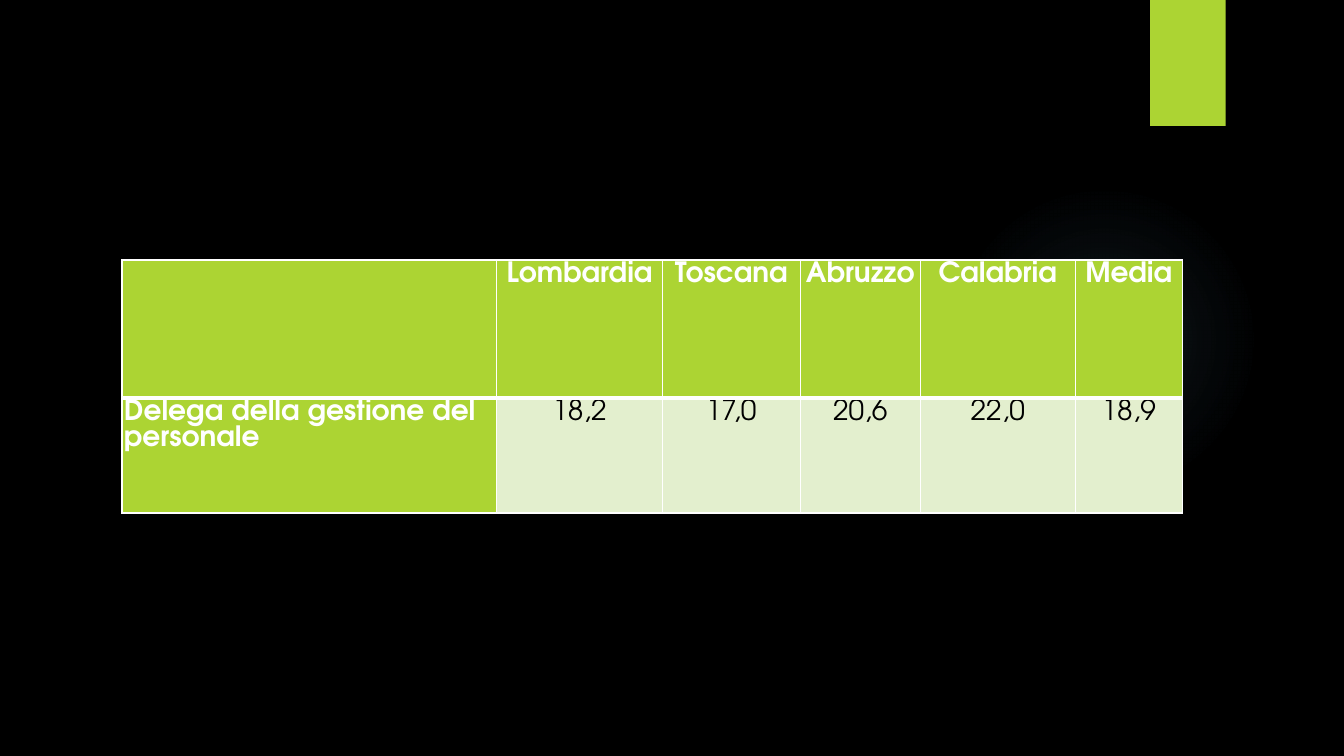
from dataclasses import dataclass

import pptx
import pptx.dml.color
import pptx.enum.shapes
import pptx.enum.text
import pptx.oxml
import pptx.oxml.ns
import pptx.util
from pptx.util import Pt

SHAPE = pptx.enum.shapes.MSO_SHAPE
ALIGN = pptx.enum.text.PP_ALIGN


@dataclass(frozen=True)
class Theme:
    font: str = "TeX Gyre Adventor"
    size: float = 20
    background: str = "000000"
    accent: str = "ACD433"
    pale: str = "E3EFCE"
    light: str = "FFFFFF"
    dark: str = "000000"
    glow: str = "7AC4F0"
    thin: float = 1
    thick: float = 3
    inset: float = 1.44


@dataclass(frozen=True)
class Column:
    width: float
    heading: str
    value: str


THEME = Theme()
COLUMNS = (
    Column(267.84, "", "Delega della gestione del personale"),
    Column(118.08, "Lombardia", "18,2"),
    Column(98.64, "Toscana", "17,0"),
    Column(85.68, "Abruzzo", "20,6"),
    Column(110.88, "Calabria", "22,0"),
    Column(76.32, "Media", "18,9"),
)
ROW_HEIGHTS = (98.64, 82.08)
GLOW_STOPS = ((0, 7), (36, 6), (69, 0))  # position and opacity, in percent


def rgb(value: str) -> pptx.dml.color.RGBColor:
    return pptx.dml.color.RGBColor.from_string(value)


def add_plain_shape(page, kind, left: float, top: float, width: float, height: float):
    shape = page.shapes.add_shape(kind, Pt(left), Pt(top), Pt(width), Pt(height))
    shape.shadow.inherit = False
    shape.line.fill.background()
    return shape


def add_glow(page) -> None:
    glow = add_plain_shape(page, SHAPE.OVAL, 677.52, 131.76, 221.76, 221.76)
    stops = "".join(
        f'<a:gs pos="{position * 1000}"><a:srgbClr val="{THEME.glow}">'
        f'<a:alpha val="{opacity * 1000}"/></a:srgbClr></a:gs>'
        for position, opacity in GLOW_STOPS
    )
    gradient = pptx.oxml.parse_xml(
        f'<a:gradFill {pptx.oxml.ns.nsdecls("a")} rotWithShape="1"><a:gsLst>{stops}</a:gsLst>'
        '<a:path path="circle"><a:fillToRect l="50000" t="50000" r="50000" b="50000"/>'
        "</a:path></a:gradFill>"
    )
    glow.fill.background()
    properties = glow.element.spPr
    properties.replace(properties.find(pptx.oxml.ns.qn("a:noFill")), gradient)


def add_tab(page) -> None:
    tab = add_plain_shape(page, SHAPE.RECTANGLE, 821.52, 0, 54, 90)
    tab.fill.solid()
    tab.fill.fore_color.rgb = rgb(THEME.accent)


def set_borders(cell, top: float, bottom: float) -> None:
    properties = cell._tc.get_or_add_tcPr()
    widths = {"lnL": THEME.thin, "lnR": THEME.thin, "lnT": top, "lnB": bottom}
    for index, (side, width) in enumerate(widths.items()):
        border = pptx.oxml.parse_xml(
            f'<a:{side} {pptx.oxml.ns.nsdecls("a")} w="{Pt(width)}"><a:solidFill>'
            f'<a:srgbClr val="{THEME.light}"/></a:solidFill></a:{side}>'
        )
        properties.insert(index, border)


def fill_cell(cell, text: str, is_heading: bool, alignment) -> None:
    cell.margin_left = cell.margin_right = Pt(THEME.inset)
    cell.margin_top = cell.margin_bottom = Pt(THEME.inset)
    cell.fill.solid()
    cell.fill.fore_color.rgb = rgb(THEME.accent if is_heading else THEME.pale)
    cell.text = text
    para = cell.text_frame.paragraphs[0]
    para.alignment = alignment
    para.font.name = THEME.font
    para.font.size = Pt(THEME.size)
    para.font.bold = is_heading
    para.font.color.rgb = rgb(THEME.light if is_heading else THEME.dark)


def add_region_table(page) -> None:
    width = sum(column.width for column in COLUMNS)
    frame = page.shapes.add_table(
        len(ROW_HEIGHTS), len(COLUMNS), Pt(87.12), Pt(185.76), Pt(width), Pt(sum(ROW_HEIGHTS))
    )
    table = frame.table
    for row, height in zip(table.rows, ROW_HEIGHTS):
        row.height = Pt(height)
    for index, column in enumerate(COLUMNS):
        table.columns[index].width = Pt(column.width)
        alignment = ALIGN.CENTER if index else ALIGN.LEFT
        heading, value = table.cell(0, index), table.cell(1, index)
        fill_cell(heading, column.heading, True, alignment)
        fill_cell(value, column.value, index == 0, alignment)
        set_borders(heading, THEME.thin, THEME.thick)
        set_borders(value, THEME.thick, THEME.thin)


def main() -> None:
    deck = pptx.Presentation()
    deck.slide_width, deck.slide_height = Pt(960), Pt(540)
    page = deck.slides.add_slide(deck.slide_layouts[6])
    page.background.fill.solid()
    page.background.fill.fore_color.rgb = rgb(THEME.background)
    add_glow(page)
    add_tab(page)
    add_region_table(page)
    deck.save("out.pptx")


if __name__ == "__main__":
    main()
